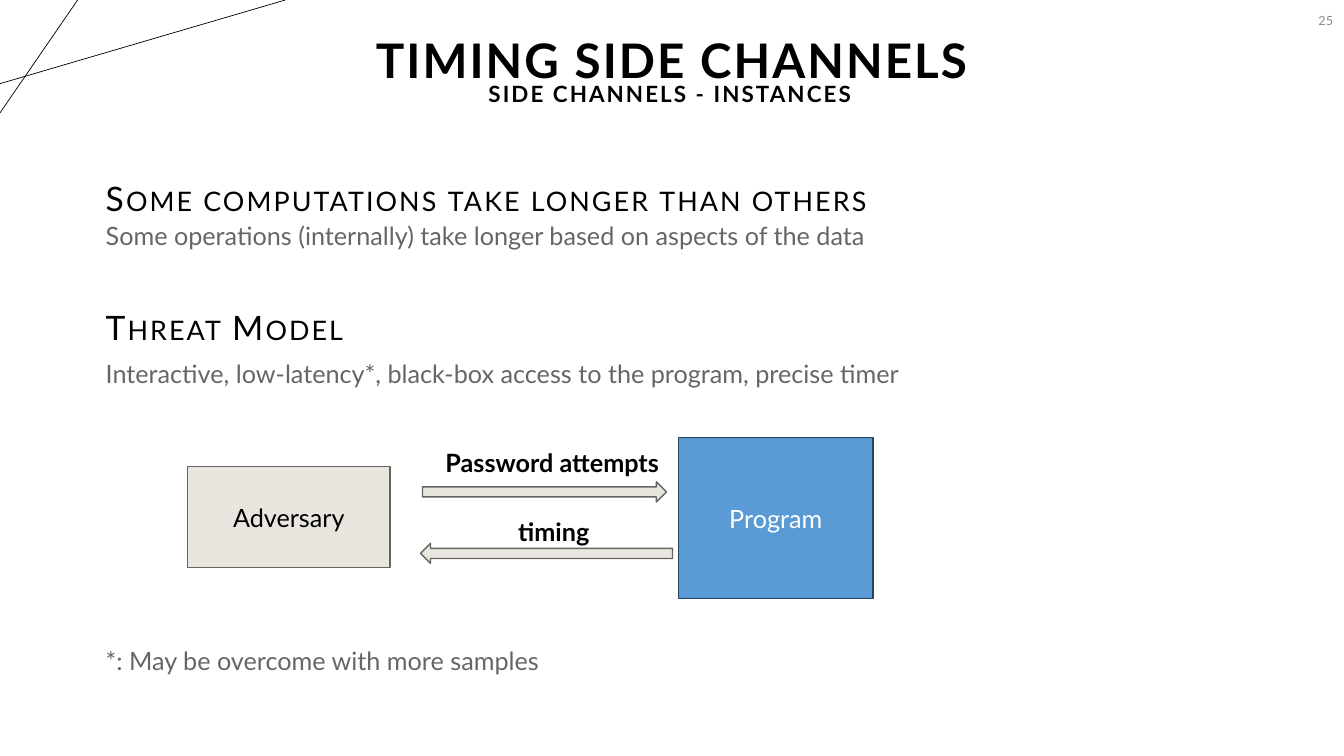
from pptx import Presentation
from pptx.dml.color import RGBColor
from pptx.enum import shapes, text
from pptx.oxml.ns import qn
from pptx.util import Inches, Pt

BLACK = RGBColor(0x00, 0x00, 0x00)
WHITE = RGBColor(0xFF, 0xFF, 0xFF)
GREY = RGBColor(0x66, 0x66, 0x66)
PALE_GREY = RGBColor(0x8C, 0x8C, 0x8C)
SAND = RGBColor(0xE9, 0xE6, 0xDF)
SAND_EDGE = RGBColor(0x66, 0x65, 0x62)
BLUE = RGBColor(0x5B, 0x9B, 0xD5)
BLUE_EDGE = RGBColor(0x28, 0x44, 0x5D)

WIDTH, HEIGHT = 13.33, 7.5
MARGIN = 0.95
LINE_H = 0.4
LEFT, CENTER, RIGHT = (text.PP_ALIGN.LEFT, text.PP_ALIGN.CENTER,
                       text.PP_ALIGN.RIGHT)

TITLE = "TIMING SIDE CHANNELS"
SUBTITLE = "SIDE CHANNELS - INSTANCES"
PAGE = "25"
HEADINGS = [  # top, wording
    (1.79, "Some computations take longer than others"),
    (3.07, "Threat Model"),
]
STATEMENTS = [  # top, wording
    (2.14, "Some operations (internally) take longer based on aspects of the data"),
    (3.51, "Interactive, low-latency*, black-box access to the program, precise timer"),
    (6.35, "*: May be overcome with more samples"),
]
PARTIES = [  # wording, box, fill, edge, font colour
    ("Program", (6.73, 4.34, 1.93, 1.6), BLUE, BLUE_EDGE, WHITE),
    ("Adversary", (1.86, 4.63, 2.01, 1), SAND, SAND_EDGE, BLACK),
]
MESSAGES = [  # wording, label box, arrow box, rotation
    ("Password attempts", (4.32, 4.39, 2.34, LINE_H), (4.19, 4.78, 2.42, 0.2), 0),
    ("timing", (5.04, 5.07, 0.91, LINE_H), (4.17, 5.39, 2.5, 0.2), 180),
]
CORNER_LINES = [  # start, end
    ((0, 0.83), (2.83, 0)),
    ((0.77, 0), (0, 1.12)),
]


def inches(values):
    return [Inches(v) for v in values]


def write(frame, wording, size, color, align=LEFT, bold=False, middle=False,
          wrap=True, line_spacing=None, before=0, tracking=0, small_caps=False):
    """Fill a text frame with one formatted run; tracking is in points."""
    frame.auto_size = text.MSO_AUTO_SIZE.NONE
    frame.word_wrap = wrap
    frame.vertical_anchor = (text.MSO_ANCHOR.MIDDLE if middle
                             else text.MSO_ANCHOR.TOP)
    paragraph = frame.paragraphs[0]
    paragraph.alignment = align
    paragraph.space_before = Pt(before)
    if line_spacing:
        paragraph.line_spacing = line_spacing
    run = paragraph.add_run()
    run.text = wording
    run.font.name = "Lato"
    run.font.size = Pt(size)
    run.font.bold = bold
    run.font.color.rgb = color
    properties = run._r.get_or_add_rPr()
    if tracking:
        properties.set("spc", str(int(tracking * 100)))
    if small_caps:
        properties.set("cap", "small")


def add_text(slide, box, wording, size, color, **style):
    frame = slide.shapes.add_textbox(*inches(box)).text_frame
    write(frame, wording, size, color, **style)


def add_block(slide, kind, box, fill, edge):
    block = slide.shapes.add_shape(kind, *inches(box))
    block.shadow.inherit = False
    block.fill.solid()
    block.fill.fore_color.rgb = fill
    block.line.color.rgb = edge
    block.line.width = Pt(1)
    return block


def add_corner_lines(slide):
    for start, end in CORNER_LINES:
        line = slide.shapes.add_connector(shapes.MSO_CONNECTOR.STRAIGHT,
                                          *inches(start + end))
        line.line.color.rgb = BLACK
        line.line.width = Pt(0.5)
        properties = line._element.spPr
        properties.append(properties.makeelement(qn("a:effectLst"), {}))


def add_headline(slide):
    style = dict(align=CENTER, bold=True, middle=True, line_spacing=0.9,
                 tracking=1.5)
    title = slide.shapes.title
    title.left, title.top, title.width, title.height = inches(
        (0.01, -0.1, 13.31, 1.45))
    write(title.text_frame, TITLE, 34, BLACK, **style)
    add_text(slide, (-0.01, 0.22, 13.31, 1.45), SUBTITLE, 16, BLACK, **style)


def add_body(slide):
    for top, wording in HEADINGS:
        add_text(slide, (MARGIN, top, 10.78, 0.44), wording, 24, BLACK,
                 line_spacing=0.8, before=10, tracking=1.5, small_caps=True)
    for top, wording in STATEMENTS:
        add_text(slide, (MARGIN, top, 9.37, LINE_H), wording, 18, GREY)


def add_threat_diagram(slide):
    for wording, box, fill, edge, color in PARTIES:
        party = add_block(slide, shapes.MSO_SHAPE.RECTANGLE, box, fill, edge)
        write(party.text_frame, wording, 18, color, align=CENTER, middle=True)
    for wording, label_box, arrow_box, rotation in MESSAGES:
        arrow = add_block(slide, shapes.MSO_SHAPE.RIGHT_ARROW, arrow_box,
                          SAND, SAND_EDGE)
        arrow.rotation = rotation
        add_text(slide, label_box, wording, 18, BLACK, bold=True, wrap=False)


def main():
    deck = Presentation()
    deck.slide_width, deck.slide_height = inches((WIDTH, HEIGHT))
    slide = deck.slides.add_slide(deck.slide_layouts.get_by_name("Title Only"))
    add_corner_lines(slide)
    add_text(slide, (10.32, 0, 3, LINE_H), PAGE, 9, PALE_GREY, align=RIGHT,
             middle=True)
    add_headline(slide)
    add_body(slide)
    add_threat_diagram(slide)
    deck.save("out.pptx")


if __name__ == "__main__":
    main()
